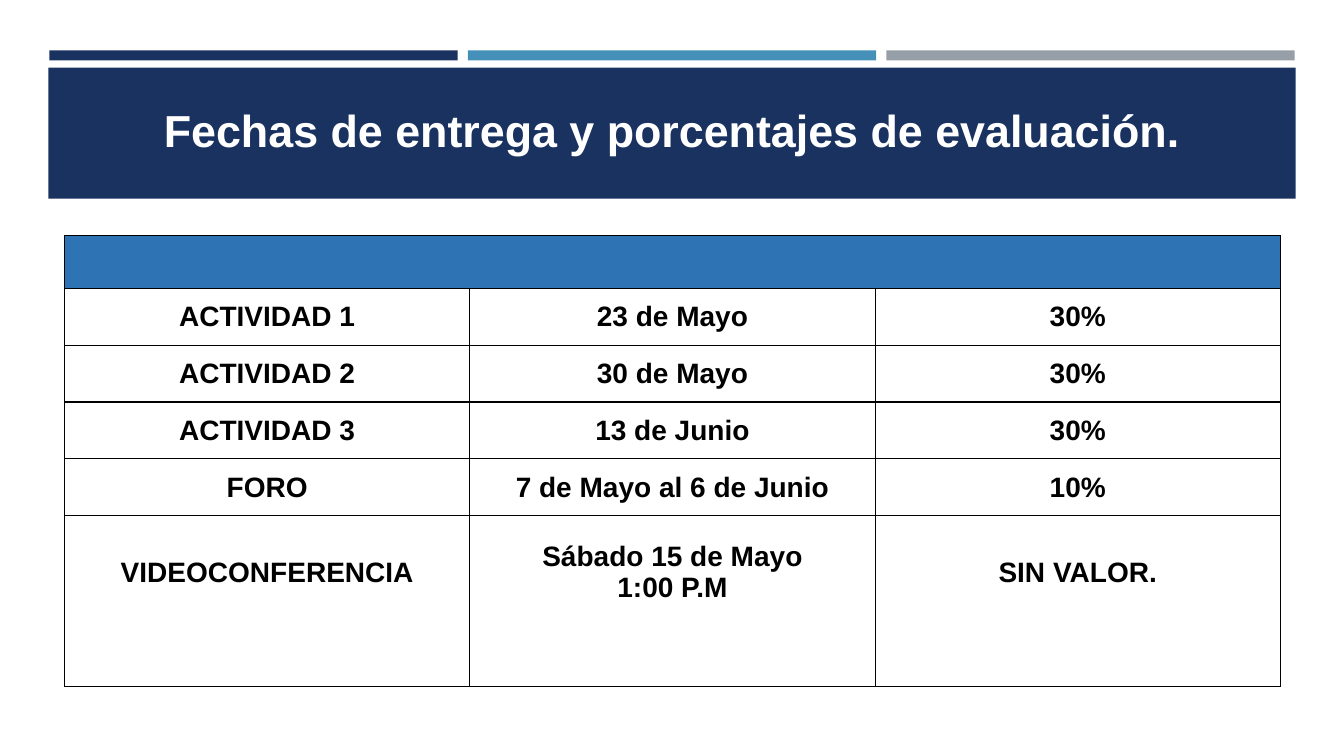
from dataclasses import dataclass
from typing import NamedTuple

from lxml.etree import SubElement
from pptx import Presentation
from pptx.dml.color import RGBColor as Rgb
from pptx.enum.shapes import MSO_SHAPE as Shape
from pptx.enum.text import MSO_ANCHOR as Anchor, PP_ALIGN as Align
from pptx.oxml import parse_xml
from pptx.oxml.ns import nsdecls, qn
from pptx.util import Inches, Pt


class Box(NamedTuple):
    x: float
    y: float
    w: float
    h: float

    def emu(self):
        return [Inches(v) for v in self]


@dataclass(frozen=True)
class Theme:
    font: str = "Arial"
    title: int = 32
    body: int = 20
    navy: str = "1A3260"
    sky: str = "4590B8"
    gray: str = "969FA7"
    head: str = "2E74B5"
    white: str = "FFFFFF"
    black: str = "000000"


THEME = Theme()
WIDE, HIGH = 13.33, 7.5
BARS = Box(0.49, 0.5, 12.35, 0.1)
BAND = Box(0.48, 0.67, 12.37, 1.3)
GRID = Box(0.64, 2.34, 12.06, 4.47)
HEAD = 0.52
UNITS = [1, 1, 1, 1, 2, 1]
TITLE = "Fechas de entrega y porcentajes de evaluación."
DATES = [
    ["ACTIVIDAD 1", "23 de Mayo", "30%"],
    ["ACTIVIDAD 2", "30 de Mayo", "30%"],
    ["ACTIVIDAD 3", "13 de Junio", "30%"],
    ["FORO", "7 de Mayo al 6 de Junio", "10%"],
    ["VIDEOCONFERENCIA", "Sábado 15 de Mayo\n1:00 P.M", "SIN VALOR."],
    ["", "", ""],
]


def assign(item, form):
    for name, value in form.items():
        setattr(item, name, value)


def write(frame, text, size, color):
    frame.text = text
    form = {"name": THEME.font, "size": Pt(size), "bold": True}
    for para in frame.paragraphs:
        para.alignment = Align.CENTER
        assign(para.font, form)
        para.font.color.rgb = Rgb.from_string(color)
        for run in para.runs:
            assign(run.font, form)
            run.font.color.rgb = Rgb.from_string(color)


def block(slide, box, color):
    rect = slide.shapes.add_shape(Shape.RECTANGLE, *box.emu())
    rect.shadow.inherit = False
    rect.fill.solid()
    rect.fill.fore_color.rgb = Rgb.from_string(color)
    rect.line.fill.background()


def bars(slide, box, gap=0.1):
    colors = [THEME.navy, THEME.sky, THEME.gray]
    wide = (box.w - gap * (len(colors) - 1)) / len(colors)
    for i, color in enumerate(colors):
        block(slide, Box(box.x + i * (wide + gap), box.y, wide, box.h), color)


def banner(slide, box):
    block(slide, box, THEME.navy)
    high = 0.64
    area = Box(GRID.x, box.y + (box.h - high) / 2 - 0.03, GRID.w, high)
    frame = slide.shapes.add_textbox(*area.emu()).text_frame
    frame.word_wrap = True
    write(frame, TITLE, THEME.title, THEME.white)


def edges(cell, hidden=""):
    """Draw thin black borders, except on the hidden sides."""
    props = cell._tc.get_or_add_tcPr()
    for i, side in enumerate("LRTB"):
        line = parse_xml(f'<a:ln{side} {nsdecls("a")} w="12700"/>')
        if side in hidden:
            SubElement(line, qn("a:noFill"))
        else:
            fill = SubElement(line, qn("a:solidFill"))
            SubElement(fill, qn("a:srgbClr"), val=THEME.black)
        props.insert(i, line)


def paint(cell, color, hidden=""):
    cell.fill.solid()
    cell.fill.fore_color.rgb = Rgb.from_string(color)
    edges(cell, hidden)


def dates(slide, box):
    rows, cols = len(DATES) + 1, len(DATES[0])
    table = slide.shapes.add_table(rows, cols, *box.emu()).table
    assign(table, {"first_row": False, "horz_banding": False})
    for col in table.columns:
        col.width = Inches(box.w / cols)
    unit = (box.h - HEAD) / sum(UNITS)
    for row, high in zip(table.rows, [HEAD] + [unit * n for n in UNITS]):
        row.height = Inches(high)

    for cell in table.rows[0].cells:
        paint(cell, THEME.head)
    table.cell(0, 0).merge(table.cell(0, cols - 1))

    open_sides = {rows - 2: "B", rows - 1: "T"}
    form = {"vertical_anchor": Anchor.MIDDLE,
            "margin_left": Inches(0.07), "margin_right": Inches(0.07),
            "margin_top": 0, "margin_bottom": 0}
    for r, texts in enumerate(DATES, 1):
        for c, text in enumerate(texts):
            cell = table.cell(r, c)
            assign(cell, form)
            paint(cell, THEME.white, open_sides.get(r, ""))
            if text:
                write(cell.text_frame, text, THEME.body, THEME.black)


def main():
    deck = Presentation()
    assign(deck, {"slide_width": Inches(WIDE), "slide_height": Inches(HIGH)})
    slide = deck.slides.add_slide(deck.slide_layouts[6])
    bars(slide, BARS)
    banner(slide, BAND)
    dates(slide, GRID)
    deck.save("out.pptx")


if __name__ == "__main__":
    main()
